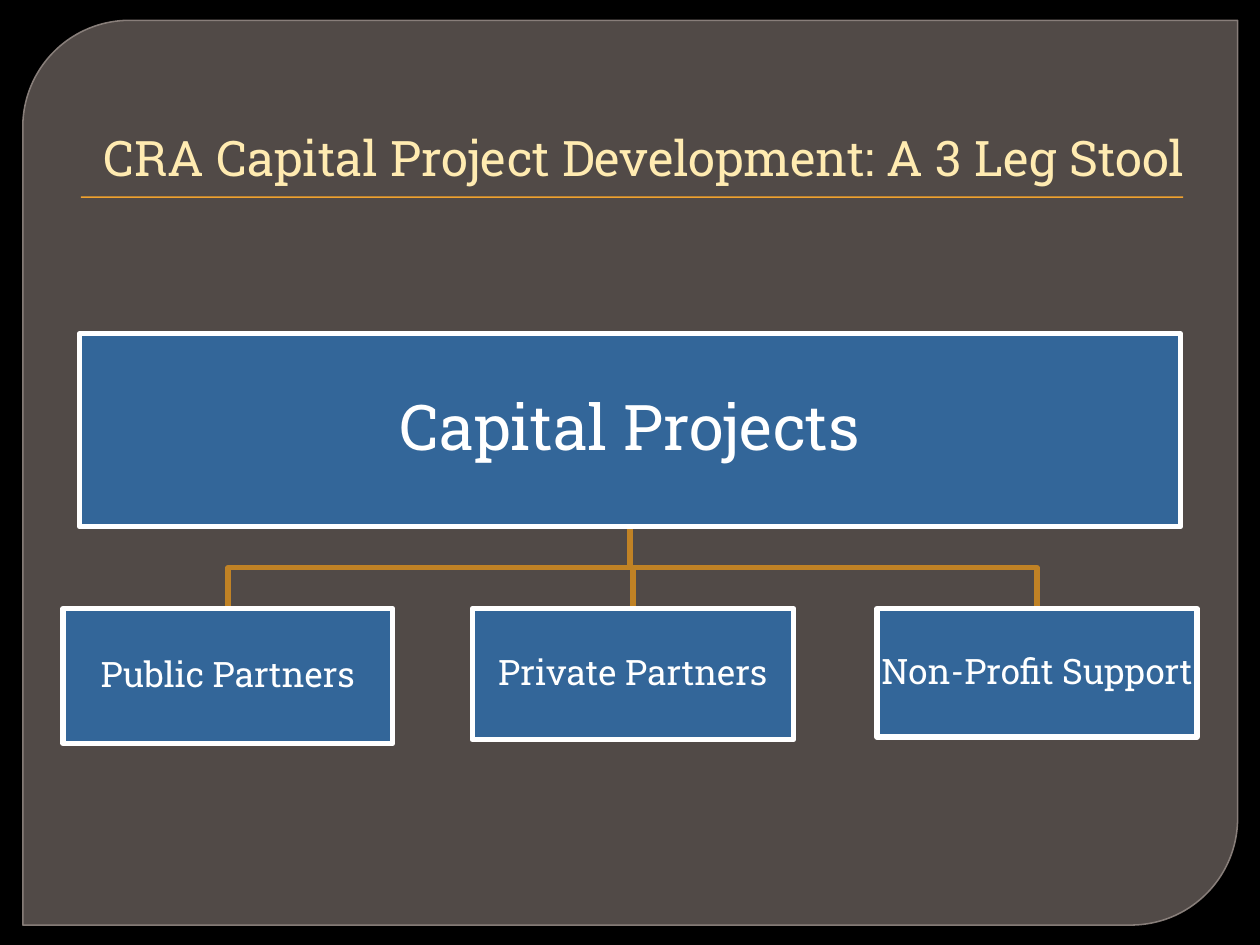
from lxml import etree
from pptx import Presentation
from pptx.dml import color
from pptx.enum import shapes, text
from pptx.oxml import ns
from pptx.util import Cm, Pt

COLORS = {
    "background": "000000", "panel": "7D726E", "panel_line": "948A85",
    "rule": "F0A22E", "title": "FFEBB1", "connector": "C08225",
    "box": "336699", "white": "FFFFFF",
}
RGB = {name: color.RGBColor.from_string(value) for name, value in COLORS.items()}


def add_block(kind, place, fill, line=None, width=0):
    shape = slide.shapes.add_shape(kind, *(Cm(length) for length in place))
    shape.shadow.inherit = False
    shape.fill.solid()
    shape.fill.fore_color.rgb = RGB[fill]
    if line:
        shape.line.color.rgb = RGB[line]
        shape.line.width = Pt(width)
    else:
        shape.line.fill.background()
    return shape


def write_text(shape, words, size, ink, inset, frame_format, paragraph_format):
    frame = shape.text_frame
    frame.text = words
    sides = ("margin_left", "margin_top", "margin_right", "margin_bottom")
    margins = dict(zip(sides, map(Cm, inset)))
    for name, value in {**margins, "word_wrap": True, **frame_format}.items():
        setattr(frame, name, value)
    paragraph = frame.paragraphs[0]
    for name, value in paragraph_format.items():
        setattr(paragraph, name, value)
    font = paragraph.runs[0].font
    for name, value in {"name": "Roboto Slab", "size": Pt(size), "bold": False}.items():
        setattr(font, name, value)
    font.color.rgb = RGB[ink]


presentation = Presentation()
presentation.slide_width, presentation.slide_height = Cm(25.4), Cm(19.05)
slide = presentation.slides.add_slide(presentation.slide_layouts[5])
slide.background.fill.solid()
slide.background.fill.fore_color.rgb = RGB["background"]

# Translucent panel with two rounded corners, and the rule under the title
panel = add_block(shapes.MSO_SHAPE.ROUND_2_DIAG_RECTANGLE,
                  (0.46, 0.41, 24.49, 18.24), "panel", "panel_line", 0.87)
panel.adjustments[0], panel.adjustments[1] = 0.118, 0
for tint, alpha in zip(panel.element.spPr.iter(ns.qn("a:srgbClr")), (65, 88)):
    etree.SubElement(tint, ns.qn("a:alpha"), val=str(alpha * 1000))
add_block(shapes.MSO_SHAPE.RECTANGLE, (1.63, 3.96, 22.22, 0.03), "rule")

# Title, moved in front of the panel
title = slide.shapes.title
slide.shapes.element.append(title.element)
for name, length in {"left": 1.27, "top": 0.71, "width": 22.86, "height": 3.18}.items():
    setattr(title, name, Cm(length))
write_text(title, "CRA Capital Project Development: A 3 Leg Stool", 28, "title",
           (0.25, 0.13, 0.25, 0.13),
           {"vertical_anchor": text.MSO_ANCHOR.BOTTOM,
            "auto_size": text.MSO_AUTO_SIZE.NONE},
           {"alignment": text.PP_ALIGN.RIGHT})

# Chart layout: one seat above three legs
seat = (1.6, 6.73, 22.2, 3.89)
leg_top = 12.27
legs = [  # words, left, width, height
    ("Public Partners", 1.27, 6.65, 2.72),
    ("Private Partners", 9.52, 6.48, 2.64),
    ("Non-Profit Support", 17.68, 6.45, 2.59),
]

# Connectors from the seat to each leg
seat_center = seat[0] + seat[2] / 2
seat_bottom = seat[1] + seat[3]
branch = (seat_bottom + leg_top) / 2
for words, left, width, height in reversed(legs):
    leg_center = left + width / 2
    points = [(seat_center, branch), (leg_center, branch), (leg_center, leg_top)]
    builder = slide.shapes.build_freeform(Cm(seat_center), Cm(seat_bottom))
    builder.add_line_segments([(Cm(x), Cm(y)) for x, y in points], close=False)
    connector = builder.convert_to_shape()
    connector.shadow.inherit = False
    connector.fill.background()
    connector.line.color.rgb = RGB["connector"]
    connector.line.width = Pt(3)

# Boxes
boxes = [("Capital Projects", seat, 36, 0.08)]
boxes += [(words, (left, leg_top, width, height), 20, 0.03)
          for words, left, width, height in legs]
for words, place, size, inset in boxes:
    box = add_block(shapes.MSO_SHAPE.RECTANGLE, place, "box", "white", 3)
    write_text(box, words, size, "white", (inset,) * 4,
               {"vertical_anchor": text.MSO_ANCHOR.MIDDLE},
               {"alignment": text.PP_ALIGN.CENTER, "line_spacing": 0.9})

presentation.save("out.pptx")
